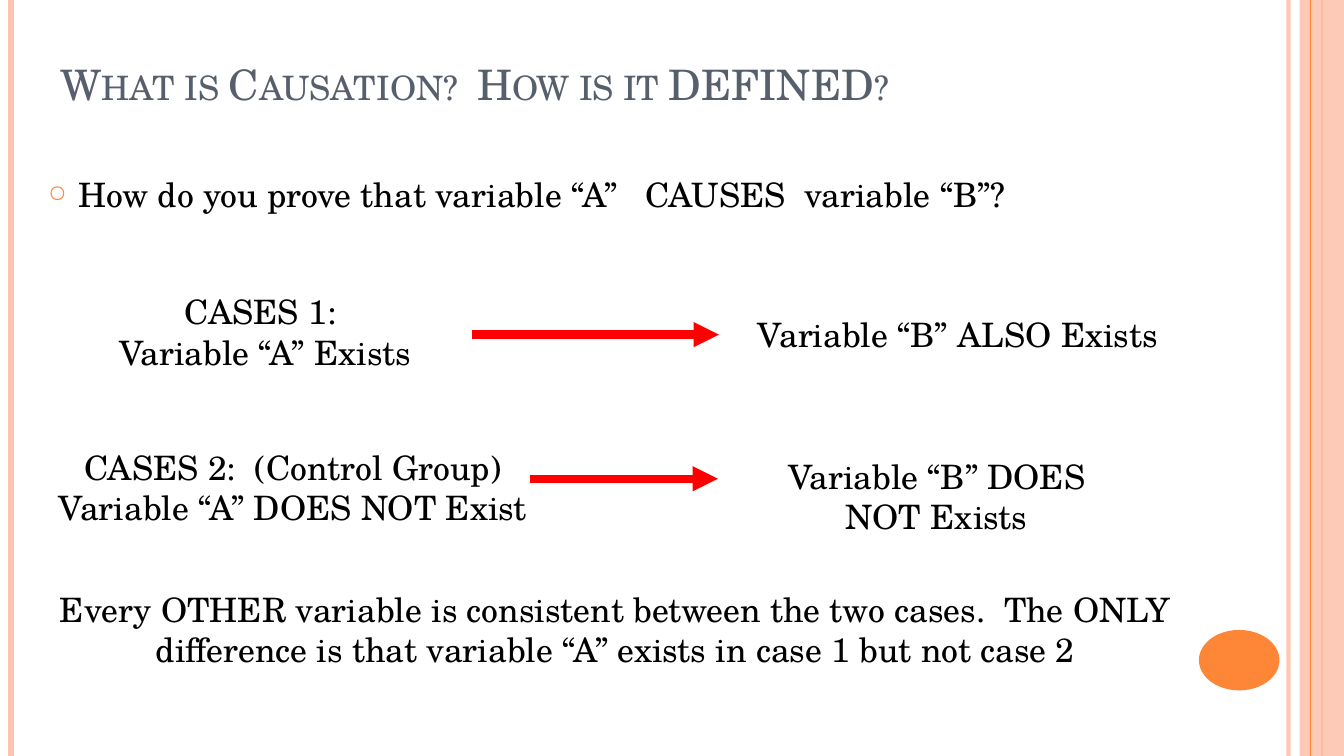
from lxml import etree
from pptx import Presentation, util as u
from pptx.dml import color as c
from pptx.enum import shapes, text
from pptx.oxml import ns

HUES = {"pink": "FEC3AE", "orange": "FE8637", "slate": "575F6D",
        "black": "000000", "red": "FF0000"}
FONT = "TeX Gyre Schola"
WIDE, HIGH = u.Inches(13.33), u.Inches(7.5)


def hue(name):
    return c.RGBColor.from_string(HUES[name])


def put(item, form):
    for key, value in form.items():
        setattr(item, key, value)


def add(node, tag, **attrs):
    return etree.SubElement(node, ns.qn(tag), attrs)


class Board:
    """Style and current slide; lengths are in a grid of 100 columns and rows."""

    def __init__(self, deck):
        self.slide = deck.slides.add_slide(deck.slide_layouts[5])
        self.col, self.row = WIDE / 100, HIGH / 100

    def box(self, x, y, w, h):
        return [round(n) for n in (x * self.col, y * self.row,
                                   w * self.col, h * self.row)]

    def fade(self, node, alpha):
        if alpha < 100:
            for tint in node.iter(ns.qn("a:srgbClr")):
                add(tint, "a:alpha", val=str(alpha * 1000))

    def line(self, start, end, tone, width, alpha=100, arrow=False):
        ends = self.box(*start, *end)
        line = self.slide.shapes.add_connector(
            shapes.MSO_CONNECTOR.STRAIGHT, *ends)
        line.line.color.rgb = hue(tone)
        line.line.width = u.Pt(width)
        props = line._element.spPr
        self.fade(props, alpha)
        if arrow:
            add(props.find(ns.qn("a:ln")), "a:tailEnd", type="triangle")
        add(props, "a:effectLst")

    def shape(self, kind, area, tone, alpha=100):
        shape = self.slide.shapes.add_shape(kind, *self.box(*area))
        shape.shadow.inherit = False
        shape.fill.solid()
        shape.fill.fore_color.rgb = hue(tone)
        shape.line.fill.background()
        self.fade(shape._element.spPr, alpha)

    def words(self, shape, copy, size, tone, align, anchor, before):
        frame = shape.text_frame
        put(frame, {"word_wrap": True, "vertical_anchor": anchor,
                    "auto_size": text.MSO_AUTO_SIZE.NONE})
        para = frame.paragraphs[0]
        para.text = copy
        put(para, {"alignment": align, "space_before": u.Pt(before)})
        for run in para.runs:
            put(run.font, {"name": FONT, "size": u.Pt(size)})
            run.font.color.rgb = hue(tone)
        return para

    def title(self, area, copy):
        shape = self.slide.shapes.title
        put(shape, dict(zip(("left", "top", "width", "height"),
                            self.box(*area))))
        para = self.words(shape, copy, 30, "slate", text.PP_ALIGN.LEFT,
                          text.MSO_ANCHOR.BOTTOM, 0)
        for run in para.runs:
            run._r.get_or_add_rPr().set("cap", "small")

    def label(self, area, copy, align=text.PP_ALIGN.CENTER):
        shape = self.slide.shapes.add_textbox(*self.box(*area))
        return self.words(shape, copy, 24, "black", align,
                          text.MSO_ANCHOR.TOP, 6)

    def bullet(self, area, copy):
        props = self.label(area, copy, text.PP_ALIGN.LEFT)._p.get_or_add_pPr()
        dent = u.Inches(0.3)
        props.set("marL", str(dent))
        props.set("indent", str(-dent))
        add(add(props, "a:buClr"), "a:srgbClr", val=HUES["orange"])
        add(props, "a:buSzPct", val="70000")
        add(props, "a:buChar", char="○")


def main():
    deck = Presentation()
    put(deck, {"slide_width": WIDE, "slide_height": HIGH})
    board = Board(deck)

    # Side stripes and dot
    for x, tone, width, alpha in ((95.87, "pink", 3, 93),
                                  (0.83, "pink", 4.5, 100),
                                  (98.35, "orange", 1.5, 100)):
        board.line((x, 0), (x, 100), tone, width, alpha)
    board.shape(shapes.MSO_SHAPE.RECTANGLE, (96.7, 0, 3.3, 100), "pink", 87)
    board.line((97.52, 0), (97.52, 100), "orange", 0.75)
    board.shape(shapes.MSO_SHAPE.OVAL, (89.2, 83.33, 6, 8), "orange")

    # Title and question
    board.title((3.75, 4, 82.97, 11.07),
                "What is Causation?  How is it DEFINED?")
    board.bullet((2.85, 22.4, 81.7, 9.33),
                 "How do you prove that variable “A”   CAUSES  variable “B”?")

    # Causes, results and closing remark
    for area, copy in (
            ((2.4, 37.87, 34.66, 12.13), "CASES 1: \nVariable “A” Exists"),
            ((2.4, 58.4, 38.78, 10.8),
             "CASES 2:  (Control Group)\nVariable “A” DOES NOT Exist"),
            ((53.94, 40.93, 34.66, 8.4), "Variable “B” ALSO Exists"),
            ((55.44, 59.6, 28.51, 8.4), "Variable “B” DOES NOT Exists"),
            ((3.08, 77.2, 85.37, 19.73),
             "Every OTHER variable is consistent between the two cases.  "
             "The ONLY difference is that variable “A” exists in case 1 "
             "but not case 2")):
        board.label(area, copy)

    # Arrows from cause to result
    for left, right, y in ((35.11, 53.49, 44.27), (39.46, 53.41, 63.33)):
        board.line((left, y), (right, y), "red", 6, arrow=True)

    deck.save("out.pptx")


if __name__ == "__main__":
    main()
